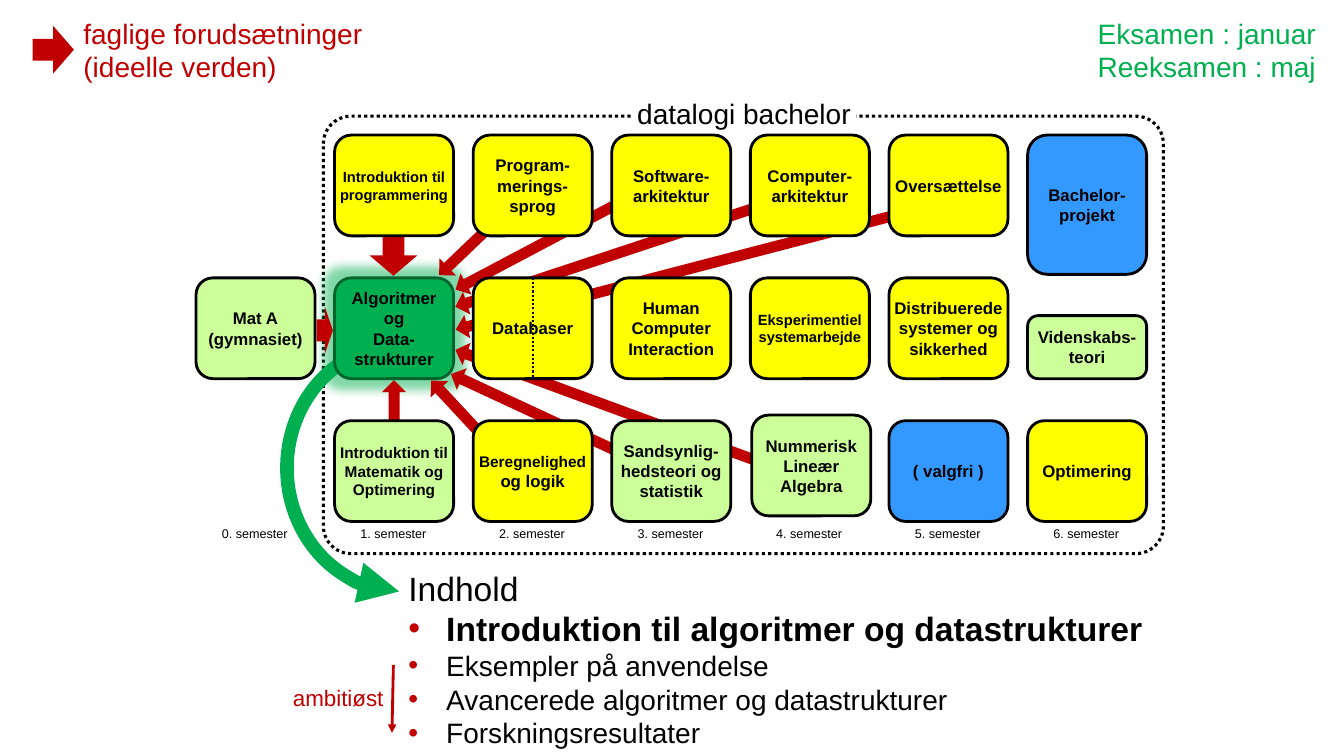
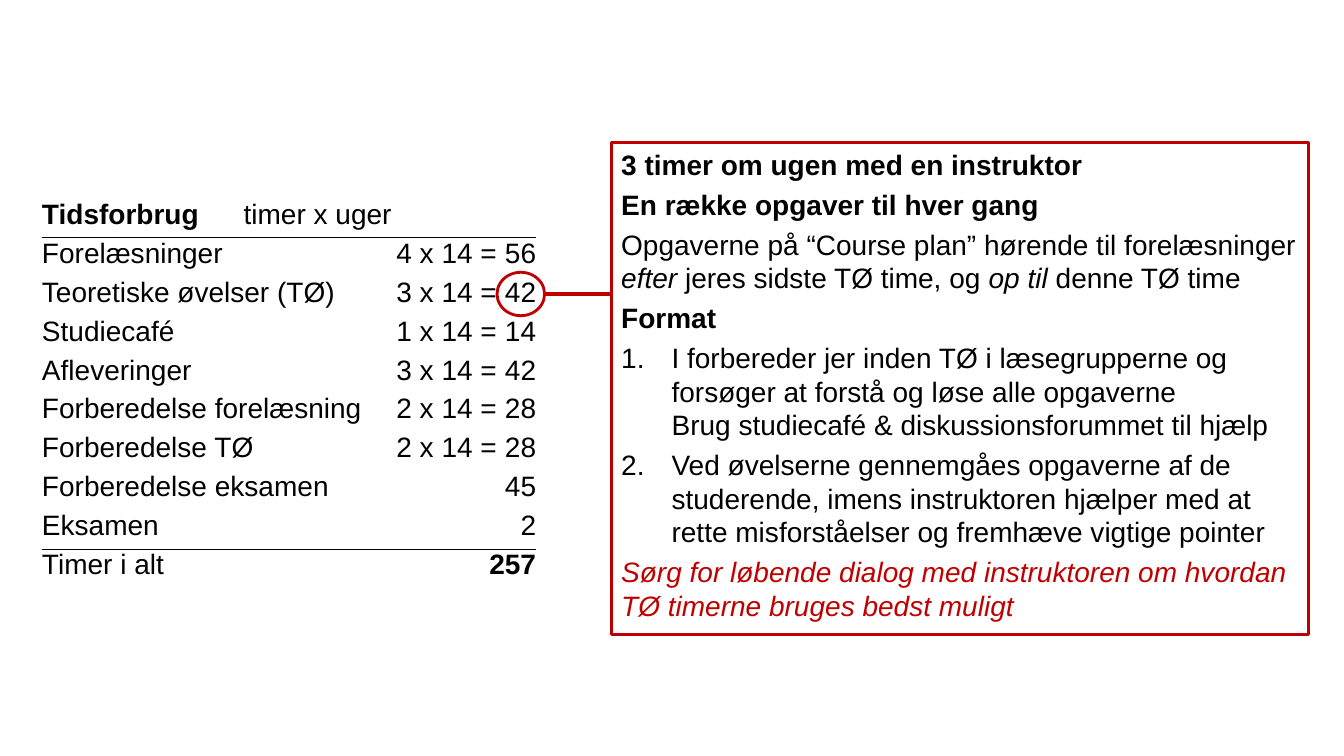
from dataclasses import dataclass
from typing import Any

from lxml import etree
from pptx import Presentation
from pptx import util as u
from pptx.dml import color as dml
from pptx.enum import dml as lines
from pptx.enum import shapes, text
from pptx.oxml import ns

Pt = u.Pt
SHAPE = shapes.MSO_SHAPE
LEFT, CENTER, RIGHT = text.PP_ALIGN.LEFT, text.PP_ALIGN.CENTER, text.PP_ALIGN.RIGHT
COLORS = {
    "black": "000000",
    "white": "FFFFFF",
    "red": "C00000",
    "green": "00B050",
    "dark green": "00642D",
    "yellow": "FFFF00",
    "lime": "CCFF99",
    "blue": "3399FF",
}


@dataclass
class Para:
    content: Any
    size: float = 20
    color: str = "black"
    bold: bool = False
    italic: bool = False
    align: Any = LEFT
    before: float = 0
    indent: float = 0
    mark: str = ""
    tab: float = 0


def rgb(name):
    return dml.RGBColor.from_string(COLORS[name])


def node(tag, parent=None, **attributes):
    values = {key: str(value) for key, value in attributes.items()}
    if parent is None:
        return etree.Element(ns.qn(tag), values)
    return etree.SubElement(parent, ns.qn(tag), values)


def solid(parent, name):
    return node("a:srgbClr", node("a:solidFill", parent), val=COLORS[name])


class Deck:
    font = "Arial"

    def __init__(self):
        self.prs = Presentation()
        self.prs.slide_width, self.prs.slide_height = Pt(960), Pt(540)
        self.slide = None

    def new_slide(self):
        self.slide = self.prs.slides.add_slide(self.prs.slide_layouts[1])
        title = self.slide.shapes.title.element
        title.getparent().remove(title)

    def set_text(self, frame, paras):
        for number, para in enumerate(paras):
            p = frame.add_paragraph() if number else frame.paragraphs[0]
            if isinstance(para.content, str):
                p.text = para.content
            else:
                for words, changes in para.content:
                    run = p.add_run()
                    run.text = words
                    for key, value in changes.items():
                        setattr(run.font, key, value)
            p.alignment = para.align
            p.space_before = Pt(para.before)
            font = p.font
            font.name, font.size = self.font, Pt(para.size)
            if isinstance(para.content, str):
                font.bold, font.italic = para.bold, para.italic
            font.color.rgb = rgb(para.color)
            self.mark(p, para)

    def mark(self, p, para):
        props = p._p.get_or_add_pPr()
        props.set("marL", str(Pt(para.indent)))
        props.set("indent", str(-Pt(para.indent)))
        if para.mark == "•":
            tint = node("a:buClr")
            node("a:srgbClr", tint, val=COLORS["red"])
            extras = [tint, node("a:buFont", typeface=self.font), node("a:buChar", char="•")]
        elif para.mark:
            extras = [node("a:buFont", typeface="+mj-lt"), node("a:buAutoNum", type=para.mark)]
        else:
            extras = [node("a:buNone")]
        if para.tab:
            stops = node("a:tabLst")
            node("a:tab", stops, pos=Pt(para.tab), algn="l")
            extras.append(stops)
        defaults = props.find(ns.qn("a:defRPr"))
        for extra in extras:
            defaults.addprevious(extra)

    def body(self, box, paras, line=None):
        holder = self.slide.placeholders[1]
        holder.left, holder.top, holder.width, holder.height = map(Pt, box)
        frame = holder.text_frame
        frame.word_wrap, frame.auto_size = True, text.MSO_AUTO_SIZE.NONE
        frame.vertical_anchor = text.MSO_ANCHOR.TOP
        self.set_text(frame, paras)
        if line:
            self.outline(holder.line, *line)

    def label(self, box, *paras):
        frame = self.slide.shapes.add_textbox(*map(Pt, box)).text_frame
        frame.word_wrap = True
        self.set_text(frame, paras)

    def outline(self, line, color, width, dotted=False, head=None, tail=None):
        line.color.rgb, line.width = rgb(color), Pt(width)
        if dotted:
            line.dash_style = lines.MSO_LINE.ROUND_DOT
        for tag, kind in (("a:headEnd", head), ("a:tailEnd", tail)):
            if kind:
                node(tag, line._get_or_add_ln(), type=kind)

    def shape(self, kind, box, fill=None, line=None, adjust=(), rotation=0, paras=(), inset=0):
        made = self.slide.shapes.add_shape(kind, *map(Pt, box))
        made.shadow.inherit = False
        made.rotation = rotation
        for index, value in enumerate(adjust):
            made.adjustments[index] = value
        if fill:
            made.fill.solid()
            made.fill.fore_color.rgb = rgb(fill)
        else:
            made.fill.background()
        if line:
            self.outline(made.line, **line)
        else:
            made.line.fill.background()
        if paras:
            frame = made.text_frame
            frame.word_wrap = True
            frame.vertical_anchor = text.MSO_ANCHOR.MIDDLE
            frame.margin_left = frame.margin_right = 0
            frame.margin_top = frame.margin_bottom = Pt(inset)
            self.set_text(frame, paras)
        return made

    def course(self, column, row, name, fill="yellow", size=12, shift=(0, 0), height=72, line="black"):
        x, y = 239 + 99 * (column - 1) + shift[0], 96.5 + 102 * row + shift[1]
        return self.shape(SHAPE.ROUNDED_RECTANGLE, (x, y, 85, height), fill,
                          dict(color=line, width=2), inset=3.6,
                          paras=[Para(name, size, bold=True, align=CENTER)])

    def glow(self, made, color, radius, alpha):
        effects = made._element.spPr.find(ns.qn("a:effectLst"))
        halo = node("a:glow", effects, rad=Pt(radius))
        node("a:alpha", node("a:srgbClr", halo, val=COLORS[color]), val=alpha * 1000)

    def arrow(self, x, y, length, rotation, thickness=17):
        self.shape(SHAPE.RIGHT_ARROW, (x - length / 2, y - thickness / 2, length, thickness),
                   "red", adjust=(0.459, 0.5), rotation=rotation)

    def connector(self, ends, **style):
        made = self.slide.shapes.add_connector(shapes.MSO_CONNECTOR.STRAIGHT, *map(Pt, ends))
        self.outline(made.line, **style)
        node("a:effectLst", made._element.spPr)
        return made

    def table(self, at, widths, row_height, rows, ruled=(), fill=None, margin=None):
        height = row_height * len(rows)
        grid = self.slide.shapes.add_table(len(rows), len(widths), *map(Pt, (*at, sum(widths), height))).table
        grid.first_row = grid.horz_banding = False
        for column, width in zip(grid.columns, widths):
            column.width = Pt(width)
        for r, row in enumerate(rows):
            grid.rows[r].height = Pt(row_height)
            for c, para in enumerate(row):
                cell = grid.cell(r, c)
                if margin is None:
                    cell.vertical_anchor = text.MSO_ANCHOR.MIDDLE
                else:
                    cell.margin_left = cell.margin_right = Pt(margin)
                    cell.margin_top = cell.margin_bottom = Pt(margin)
                if para:
                    self.set_text(cell.text_frame, [para])
                if fill:
                    cell.fill.solid()
                    cell.fill.fore_color.rgb = rgb(fill)
                else:
                    cell.fill.background()
                self.borders(cell, top=r - 1 in ruled, bottom=r in ruled)
        return grid

    def borders(self, cell, top, bottom):
        props = cell._tc.get_or_add_tcPr()
        sides = (("a:lnL", False), ("a:lnR", False), ("a:lnT", top), ("a:lnB", bottom))
        for index, (tag, drawn) in enumerate(sides):
            edge = node(tag, w=Pt(1))
            if drawn:
                solid(edge, "black")
            else:
                node("a:noFill", edge)
            props.insert(index, edge)


def curriculum(deck):
    deck.new_slide()
    deck.body((284.5, 402, 541.5, 138), [
        Para("Indhold", 24),
        Para("Introduktion til algoritmer og datastrukturer", 24, bold=True, indent=27, mark="•"),
        *(Para(topic, indent=27, mark="•") for topic in (
            "Eksempler på anvendelse", "Avancerede algoritmer og datastrukturer", "Forskningsresultater")),
    ])
    deck.shape(SHAPE.ROUNDED_RECTANGLE, (231, 83, 600, 312.5), adjust=(0.063,),
               line=dict(color="black", width=2.25, dotted=True))
    deck.shape(SHAPE.RECTANGLE, (451.5, 69, 160, 24.5), "white",
               paras=[Para("datalogi bachelor", align=CENTER)])
    deck.shape(SHAPE.ARC, (205, 246, 163.5, 176.5), adjust=(54.66, 153.28),
               line=dict(color="green", width=9.75, head="triangle"))
    algorithms = deck.course(1, 1, "Algoritmer og\nData-strukturer", "green", line="dark green")
    deck.glow(algorithms, "green", 14, 50)

    for prerequisite in (
        (395, 170, 157.5, 152.1), (500, 190, 360.5, 165.4), (354.5, 157.5, 113, 136.3),
        (457.5, 175.5, 278.5, 161.7), (456, 298, 278.5, 200.2), (232, 236, 11.5, 0, 34),
        (281.5, 286, 29, 270), (330.5, 296, 66, 227.1), (409, 307.5, 191.5, 204.9),
        (281, 182.5, 29, 90, 34), (38, 35.5, 29.5, 0, 34),
    ):
        deck.arrow(*prerequisite)

    deck.table((132.5, 367), [99] * 7, 29.5,
               [[Para(f"{number}. semester", 9, align=CENTER) for number in range(7)]])
    deck.course(0, 1, "Mat A\n(gymnasiet)", "lime")
    databases = deck.course(2, 1, "Databaser")
    divider = deck.connector((380.5, 198.5, 380.5, 270.5), color="black", width=1.5, dotted=True)
    divider.begin_connect(databases, 0)
    divider.end_connect(databases, 2)
    deck.course(1, 0, "Introduktion til programmering", size=10.5)
    deck.course(2, 0, "Program-merings-sprog")
    deck.course(3, 0, "Software-arkitektur")
    deck.course(4, 0, "Computer-arkitektur")
    deck.course(5, 0, "Oversættelse")
    deck.course(6, 0, "Bachelor-\nprojekt", "blue", height=99.5)
    deck.course(3, 1, "Human Computer Interaction")
    deck.course(4, 1, "Eksperimentiel systemarbejde", size=10.5)
    deck.course(5, 1, "Distribuerede systemer og sikkerhed")
    deck.course(6, 1, "Videnskabs-teori", "lime", shift=(0, 27), height=45)
    deck.course(1, 2, "Introduktion til Matematik og Optimering", "lime", 11)
    deck.course(2, 2, [("Beregnelighed", {"size": Pt(11), "bold": True}), (" og logik", {"bold": True})])
    deck.course(3, 2, "Sandsynlig-hedsteori og statistik", "lime")
    deck.course(4, 2, "Nummerisk Lineær Algebra", "lime", shift=(1, -4))
    deck.course(5, 2, "( valgfri )", "blue")
    deck.course(6, 2, "Optimering")

    deck.label((777, 8, 183, 55.5), Para("Eksamen : januar", color="green"), Para("Reeksamen : maj", color="green"))
    deck.label((52.5, 8, 221, 55.5), Para("faglige forudsætninger\n(ideelle verden)", color="red"))
    deck.label((196, 485, 85, 26.5), Para("ambitiøst", 16, "red", align=RIGHT))
    deck.connector((281, 475, 280, 523.5), color="red", width=2, tail="triangle")


def workload(deck):
    deck.new_slide()
    italic, numbered = {"italic": True}, dict(indent=36, mark="arabicPeriod")
    deck.body((436.5, 101.5, 498, 351.5), [
        Para(before=4.5, **para) for para in (
            dict(content="3 timer om ugen med en instruktor", bold=True),
            dict(content="En række opgaver til hver gang", bold=True),
            dict(content=[("Opgaverne på “Course plan” hørende til forelæsninger ", {}), ("efter ", italic),
                          ("jeres sidste TØ time, og ", {}), ("op til ", italic), ("denne TØ time", {})]),
            dict(content="Format", bold=True),
            dict(content="I forbereder jer inden TØ i læsegrupperne og forsøger at forstå og løse alle "
                 "opgaverne\nBrug studiecafé & diskussionsforummet til hjælp", **numbered),
            dict(content="Ved øvelserne gennemgåes opgaverne af de studerende, imens instruktoren hjælper "
                 "med at rette misforståelser og fremhæve vigtige pointer", **numbered),
            dict(content="Sørg for løbende dialog med instruktoren om hvordan TØ timerne bruges bedst muligt",
                 color="red", italic=True),
        )
    ], line=("red", 2.25))
    weekly = [("Forelæsninger", 4), ("Teoretiske øvelser (TØ)", 3), ("Studiecafé", 1), ("Afleveringer", 3),
              ("Forberedelse forelæsning", 2), ("Forberedelse TØ", 2)]
    once = [("Forberedelse eksamen", 45), ("Eksamen", 2)]
    total = sum(14 * hours for _, hours in weekly) + sum(hours for _, hours in once)
    heading = Para([("Tidsforbrug", {"bold": True}), ("\ttimer x uger", {})], tab=246)
    rows = [[heading, None, None]]
    rows += [[Para(task), Para(f"{hours} x 14 =", align=RIGHT), Para(str(14 * hours), align=RIGHT)]
             for task, hours in weekly]
    rows += [[Para(task), None, Para(str(hours), align=RIGHT)] for task, hours in once]
    rows.append([Para("Timer i alt"), Para(str(total), bold=True, align=RIGHT), None])
    hours_table = deck.table((30, 142), [248, 77, 28], 27.86, rows, ruled=(0, 8), fill="white", margin=0)
    hours_table.cell(0, 0).merge(hours_table.cell(0, 2))
    hours_table.cell(9, 1).merge(hours_table.cell(9, 2))
    deck.shape(SHAPE.OVAL, (355, 194.5, 34, 31), line=dict(color="red", width=2))
    deck.connector((389, 210, 436.5, 210), color="red", width=2.25)


def main():
    deck = Deck()
    curriculum(deck)
    workload(deck)
    deck.prs.save("out.pptx")


if __name__ == "__main__":
    main()
